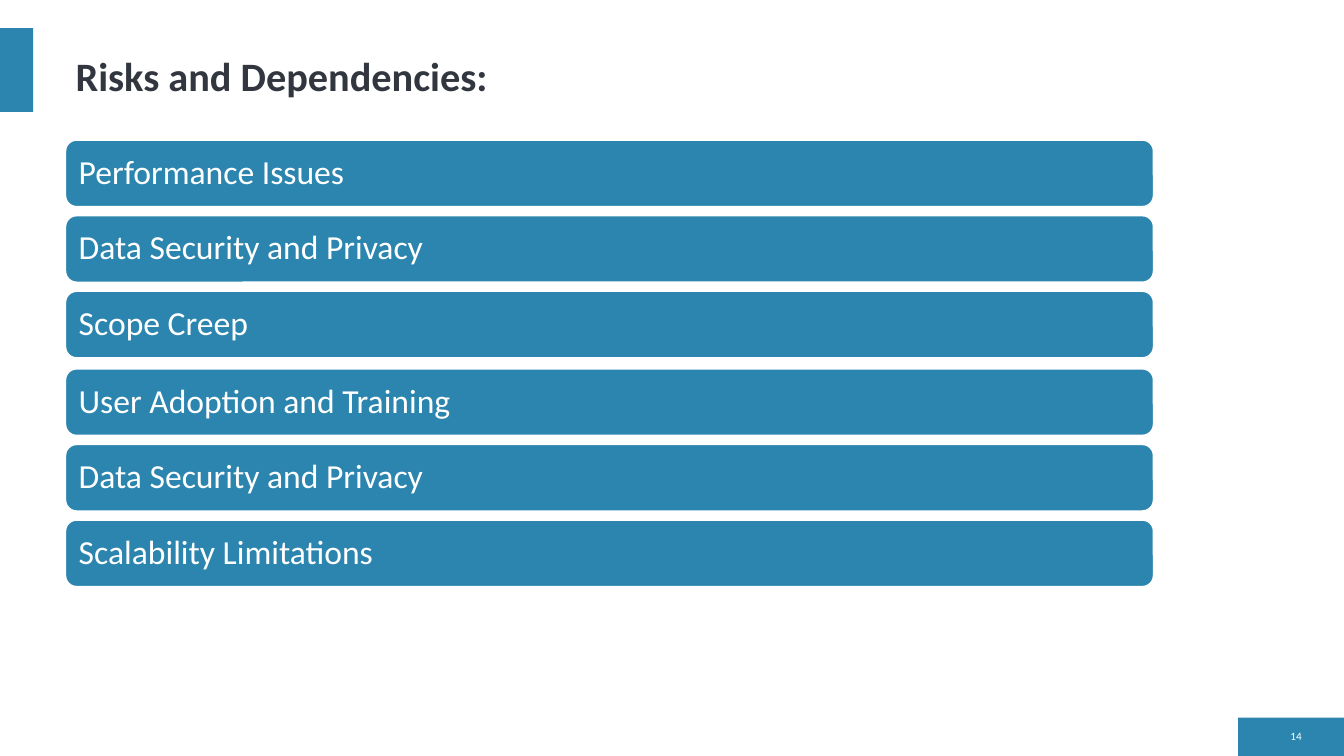
"""Build the slide listing project risks and dependencies."""
from pptx import Presentation
from pptx.dml.color import RGBColor
from pptx.enum.shapes import MSO_SHAPE as Shape
from pptx.enum.text import MSO_ANCHOR as Anchor, MSO_AUTO_SIZE as AutoSize, PP_ALIGN as Align
from pptx.util import Inches, Pt

BLUE = RGBColor(0x2C, 0x85, 0xAE)
DARK = RGBColor(0x32, 0x36, 0x3F)
WHITE = RGBColor(0xFF, 0xFF, 0xFF)

LEFT, TOP = 0.65, 1.39
BAR_WIDTH, BAR_HEIGHT = 10.79, 0.66
ROW_PITCH, GROUP_PITCH = 0.75, 2.27
RISK_GROUPS = [
    ["Performance Issues", "Data Security and Privacy", "Scope Creep"],
    ["User Adoption and Training", "Data Security and Privacy", "Scalability Limitations"],
]


def add_block(page, kind, left, top, width, height):
    block = page.shapes.add_shape(kind, Inches(left), Inches(top), Inches(width), Inches(height))
    block.shadow.inherit = False
    block.fill.solid()
    block.fill.fore_color.rgb = BLUE
    block.line.fill.background()
    return block


def write(box, text, size, color, anchor, align=Align.LEFT, bold=False):
    frame = box.text_frame
    frame.text = text
    frame.word_wrap = True
    frame.auto_size = AutoSize.NONE
    frame.vertical_anchor = anchor
    para = frame.paragraphs[0]
    para.alignment = align
    para.line_spacing = 0.9
    font = para.runs[0].font
    font.name = "Calibri"
    font.size = Pt(size)
    font.bold = bold
    font.color.rgb = color


deck = Presentation()
deck.slide_width, deck.slide_height = Inches(13.33), Inches(7.5)
page = deck.slides.add_slide(deck.slide_layouts[5])

add_block(page, Shape.RECTANGLE, 12.28, 7.12, 1.05, 0.38)
add_block(page, Shape.RECTANGLE, 0, 0.28, 0.33, 0.83)

title = page.shapes.title
title.left, title.top = Inches(LEFT), Inches(0.41)
title.width, title.height = Inches(4.63), Inches(0.63)
write(title, "Risks and Dependencies:", 28.8, DARK, Anchor.BOTTOM, bold=True)

number = page.shapes.add_textbox(Inches(12.6), Inches(7.2), Inches(0.41), Inches(0.23))
write(number, "14", 8, WHITE, Anchor.MIDDLE, Align.RIGHT)

for group, risks in enumerate(RISK_GROUPS):
    for row, risk in enumerate(risks):
        top = TOP + group * GROUP_PITCH + row * ROW_PITCH
        bar = add_block(page, Shape.ROUNDED_RECTANGLE, LEFT, top, BAR_WIDTH, BAR_HEIGHT)
        bar.line.color.rgb = WHITE
        bar.line.width = Pt(1)
        write(bar, risk, 24, WHITE, Anchor.MIDDLE)

deck.save("out.pptx")
